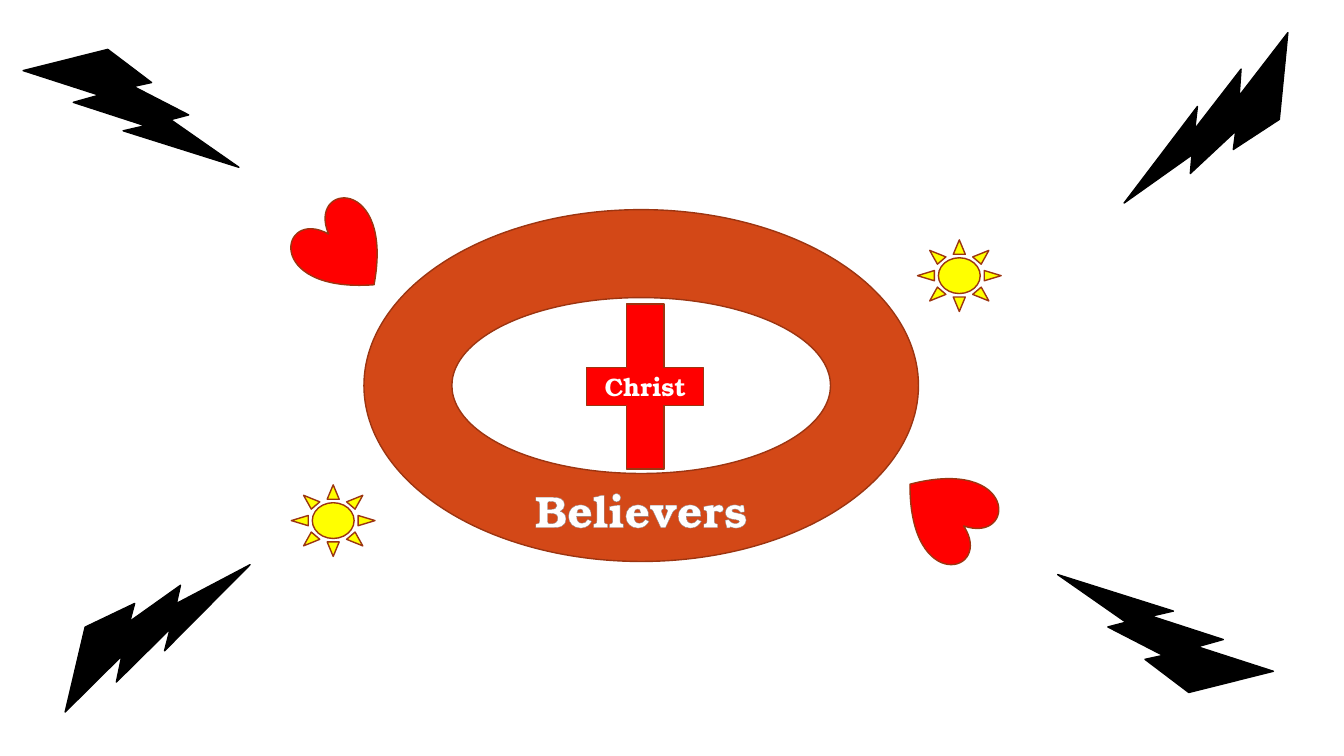
import pptx
import pptx.util
import pptx.dml.color
import pptx.enum.shapes
import pptx.enum.text
import pptx.oxml
import pptx.oxml.ns
from dataclasses import dataclass

Inches = pptx.util.Inches
Pt = pptx.util.Pt
Preset = pptx.enum.shapes.MSO_SHAPE
Anchor = pptx.enum.text.MSO_ANCHOR


@dataclass(frozen=True)
class Theme:
    font: str = "TeX Gyre Bonum"
    white: str = "FFFFFF"
    black: str = "000000"
    red: str = "FF0000"
    yellow: str = "FFFF00"
    orange: str = "D34817"
    rust: str = "9C3511"
    letter_edge: str = "918485"
    letter_edge_width: float = 0.8
    line_width: float = 1
    cross_size: int = 18
    ring_size: int = 32


THEME = Theme()

KINDS = {
    "cross": (Preset.MATH_PLUS, 1.58, 2.23, THEME.red, THEME.rust),
    "ring": (Preset.DONUT, 5.5, 3.49, THEME.orange, THEME.rust),
    "bolt": (Preset.LIGHTNING_BOLT, 2.14, 1.17, THEME.black, THEME.black),
    "sun": (Preset.SUN, 0.83, 0.71, THEME.yellow, THEME.rust),
    "heart": (Preset.HEART, 0.86, 0.9, THEME.red, THEME.rust),
}

CROSS = ("cross", 5.61, 2.72, 0)
RING = ("ring", 3.61, 2.08, 0)
SURROUNDINGS = [
    ("bolt", 0.23, 0.49, 0),
    ("bolt", 10.49, 5.7, 180),
    ("bolt", 10.99, 0.62, 109.7),
    ("bolt", 0.4, 5.7, 297.3),
    ("sun", 9.1, 2.38, 0),
    ("heart", 2.98, 2.04, 318.1),
    ("heart", 8.95, 4.63, 127.9),
    ("sun", 2.89, 4.81, 0),
]


def color(value):
    return pptx.dml.color.RGBColor.from_string(value)


def add_figure(page, kind, left, top, rotation):
    preset, width, height, fill, line = KINDS[kind]
    figure = page.shapes.add_shape(
        preset, Inches(left), Inches(top), Inches(width), Inches(height))
    figure.rotation = rotation
    figure.shadow.inherit = False
    figure.fill.solid()
    figure.fill.fore_color.rgb = color(fill)
    figure.line.color.rgb = color(line)
    figure.line.width = Pt(THEME.line_width)
    return figure


def add_label(figure, text, size, anchor):
    frame = figure.text_frame
    frame.word_wrap = True
    frame.vertical_anchor = anchor
    para = frame.paragraphs[0]
    para.alignment = pptx.enum.text.PP_ALIGN.CENTER
    span = para.add_run()
    span.text = text
    span.font.name = THEME.font
    span.font.size = Pt(size)
    span.font.bold = True
    span.font.color.rgb = color(THEME.white)
    return span


def outline_letters(span):
    edge = pptx.oxml.parse_xml(
        f'<a:ln {pptx.oxml.ns.nsdecls("a")} w="{Pt(THEME.letter_edge_width)}">'
        f'<a:solidFill><a:srgbClr val="{THEME.letter_edge}"/></a:solidFill></a:ln>')
    span.font._element.insert(0, edge)


def main():
    deck = pptx.Presentation()
    deck.slide_width = Inches(13.33)
    deck.slide_height = Inches(7.5)
    page = deck.slides.add_slide(deck.slide_layouts[6])

    cross = add_figure(page, *CROSS)
    add_label(cross, "Christ", THEME.cross_size, Anchor.MIDDLE)

    ring = add_figure(page, *RING)
    ring.text_frame.margin_top = Inches(2.2)
    outline_letters(add_label(ring, "Believers", THEME.ring_size, Anchor.TOP))

    for item in SURROUNDINGS:
        add_figure(page, *item)

    deck.save("out.pptx")


if __name__ == "__main__":
    main()
